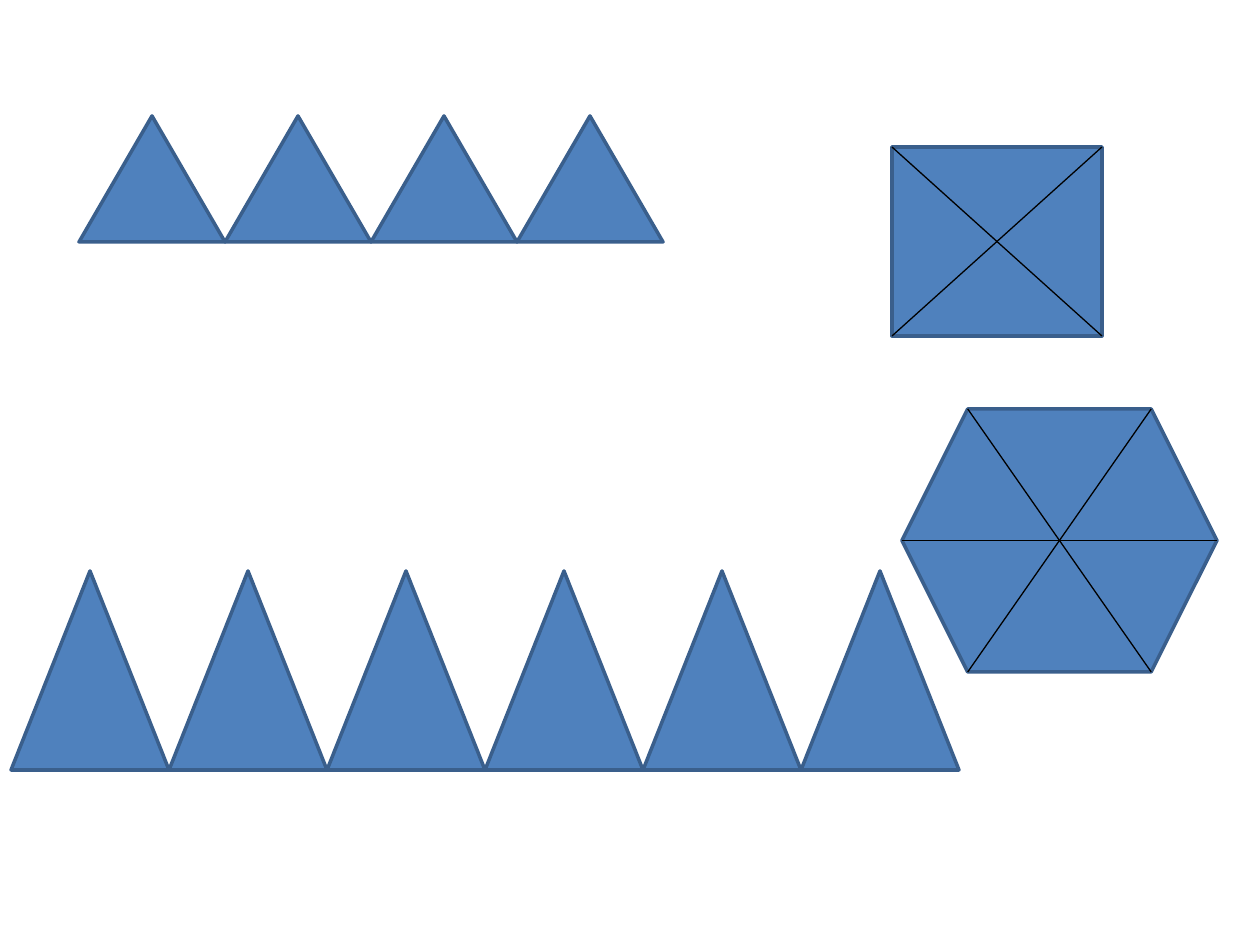
import pptx
import pptx.dml.color
import pptx.enum.shapes
import pptx.oxml.ns
import pptx.util

PX_PER_INCH = 126
EMU_PER_PX = 914400 / PX_PER_INCH

BLUE = pptx.dml.color.RGBColor(0x4F, 0x81, 0xBD)
DARK_BLUE = pptx.dml.color.RGBColor(0x3A, 0x5F, 0x8C)
BLACK = pptx.dml.color.RGBColor(0, 0, 0)
SHAPES = pptx.enum.shapes.MSO_SHAPE


def px(length):
    return pptx.util.Emu(round(length * EMU_PER_PX))


class FigureSlide:
    """Holds the slide and the style of its geometric figures."""

    OUTLINE = {"color": DARK_BLUE, "width": pptx.util.Pt(2)}
    DIVIDER = {"color": BLACK, "width": pptx.util.Pt(0.75)}

    def __init__(self, slide):
        self.slide = slide

    def stroke(self, line, style):
        line.fill.solid()
        for part, values in (
            (line.fill.fore_color, {"rgb": style["color"]}),
            (line, {"width": style["width"]}),
        ):
            for name, value in values.items():
                setattr(part, name, value)

    def polygon(self, kind, left, top, width, height, parent=None):
        shapes = (parent or self.slide).shapes
        figure = shapes.add_shape(kind, px(left), px(top), px(width), px(height))
        figure.shadow.inherit = False
        figure.fill.solid()
        figure.fill.fore_color.rgb = BLUE
        self.stroke(figure.line, self.OUTLINE)

    def triangle_row(self, count, left, top, width, height):
        """Group equal triangles that stand side by side on one base line."""
        row = self.slide.shapes.add_group_shape()
        for index in range(count):
            self.polygon(SHAPES.ISOSCELES_TRIANGLE, left + index * width, top,
                         width, height, row)

    def divider(self, start, end):
        line = self.slide.shapes.add_connector(
            pptx.enum.shapes.MSO_CONNECTOR.STRAIGHT,
            *(px(length) for length in (*start, *end)))
        self.stroke(line.line, self.DIVIDER)
        properties = line._element.spPr
        properties.append(properties.makeelement(pptx.oxml.ns.qn("a:effectLst"), {}))

    def diagonals(self, left, top, right, bottom):
        self.divider((left, top), (right, bottom))
        self.divider((right, top), (left, bottom))

    def divided_rectangle(self, left, top, width, height):
        self.polygon(SHAPES.RECTANGLE, left, top, width, height)
        self.diagonals(left, top, left + width, top + height)

    def divided_hexagon(self, left, top, width, height):
        self.polygon(SHAPES.HEXAGON, left, top, width, height)
        right, middle = left + width, top + height / 2
        inset = height / 4  # the preset hexagon cuts its corners by a quarter
        self.diagonals(left + inset, top, right - inset, top + height)
        self.divider((left, middle), (right, middle))


def main():
    deck = pptx.Presentation()
    deck.slide_width, deck.slide_height = px(1260), px(945)
    figures = FigureSlide(deck.slides.add_slide(deck.slide_layouts[6]))
    figures.triangle_row(4, left=79, top=116, width=146, height=126)
    figures.divided_rectangle(left=892, top=147, width=210, height=189)
    figures.divided_hexagon(left=902, top=409, width=315, height=263)
    figures.triangle_row(6, left=11, top=571, width=158, height=199)
    deck.save("out.pptx")


if __name__ == "__main__":
    main()
